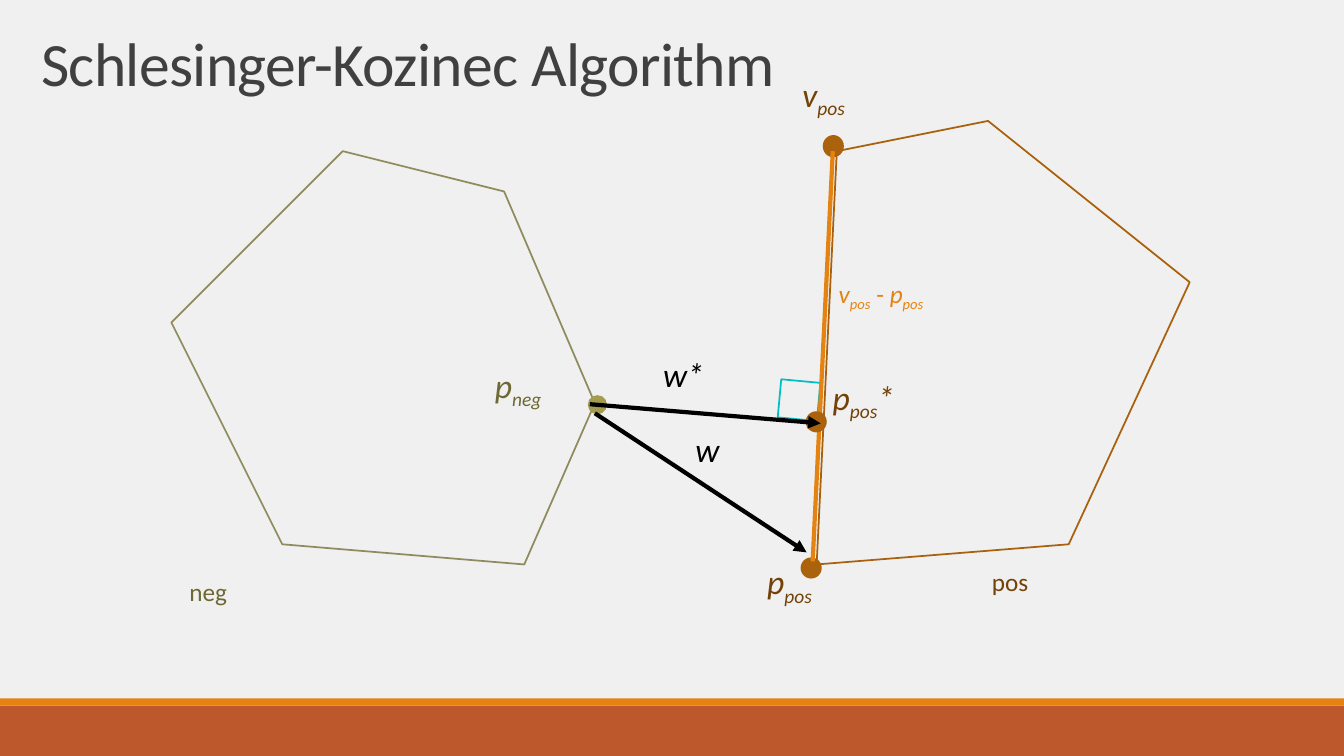
"""Build the Schlesinger-Kozinec slide on a grid of tenth-inch cells."""
from lxml import etree
from pptx import Presentation
from pptx import util as u
from pptx.dml import color
from pptx.enum import shapes, text
from pptx.oxml import ns

prs = Presentation()
prs.slide_width, prs.slide_height = u.Inches(13.33), u.Inches(7.5)
s = prs.slides.add_slide(prs.slide_layouts[6])
cell = prs.slide_height / 75
columns = prs.slide_width / cell
OVAL, RECT = shapes.MSO_SHAPE.OVAL, shapes.MSO_SHAPE.RECTANGLE
BROWN, ORANGE, BLACK = "AB620D", "E48312", "000000"
POS_TEXT, NEG_TEXT = "724209", "6D6834"


def rgb(code):
    return color.RGBColor.from_string(code)


def add_filled(kind, fill, *at):
    sp = s.shapes.add_shape(kind, *(round(n * cell) for n in at))
    sp.shadow.inherit = False
    sp.fill.solid()
    sp.fill.fore_color.rgb = rgb(fill)
    sp.line.fill.background()
    return sp


s.background.fill.solid()
s.background.fill.fore_color.rgb = rgb("F0F0F0")
add_filled(RECT, "BD582C", 0, 70, columns, 5)
add_filled(RECT, ORANGE, 0, 69.3, columns, 0.7)

title = s.shapes.add_textbox(*(round(n * cell) for n in (3.1, 3, 110, 7.5)))
tf = title.text_frame
tf.word_wrap = True
tf.vertical_anchor = text.MSO_ANCHOR.MIDDLE
p = tf.paragraphs[0]
p.line_spacing = 0.85
r = p.add_run()
r.text = "Schlesinger-Kozinec Algorithm"
r.font.name, r.font.size = "Calibri", u.Pt(44)
r.font.color.rgb = rgb("404040")
r.font._element.set("spc", "-50")

polygons = [
    ("908B5F", [(28.2, 54), (52.4, 55.7), (59.3, 40.1), (50, 18.6), (34.2, 14.7), (16.7, 32.4)]),
    ("A9610D", [(80.6, 56.2), (82.8, 14.8), (98.4, 12.4), (117.5, 27.5), (106.4, 53.9)]),
]
for line, points in polygons:
    fb = s.shapes.build_freeform(*points[0], scale=cell)
    fb.add_line_segments(points[1:], close=True)
    sp = fb.convert_to_shape()
    sp.shadow.inherit = False
    sp.fill.background()
    sp.line.color.rgb = rgb(line)
    sp.line.width = u.Pt(1.25)

add_filled(OVAL, BROWN, 81.6, 13.4, 2.1, 2.2)
add_filled(OVAL, BROWN, 79.4, 55.3, 2.1, 2.1)
add_filled(OVAL, "A39B4E", 58.3, 39.2, 1.9, 1.9)

angle = add_filled(RECT, BLACK, 77.3, 37.8, 3.9, 3.8)
angle.rotation = 5.3
angle.fill.background()
angle.line.color.rgb = rgb("00BFC4")
angle.line.width = u.Pt(1.25)

segments = [
    (BLACK, True, (59, 41, 80, 54.8)),
    (ORANGE, False, (82.6, 15, 80.6, 55.7)),
    (BLACK, True, (58.5, 40.1, 81.4, 42)),
]
for line, arrow, ends in segments:
    if ends == segments[-1][2]:
        add_filled(OVAL, BROWN, 79.9, 40.8, 2.1, 2.1)
    c = s.shapes.add_connector(shapes.MSO_CONNECTOR.STRAIGHT, *(round(n * cell) for n in ends))
    c.line.color.rgb = rgb(line)
    c.line.width = u.Pt(3)
    if arrow:
        etree.SubElement(c.line._get_or_add_ln(), ns.qn("a:tailEnd"), type="triangle")
    etree.SubElement(c._element.spPr, ns.qn("a:effectLst"))

labels = [
    (NEG_TEXT, 18, (17.8, 56.7, 16.1, 5.8), ["neg"]),
    (POS_TEXT, 18, (97.4, 55.7, 16.1, 5.8), ["pos"]),
    (POS_TEXT, 24, (75.1, 55.2, 10.3, 7.2), ["p", "_pos"]),
    (NEG_TEXT, 24, (48.1, 35.7, 10.3, 7.2), ["p", "_neg"]),
    (POS_TEXT, 24, (78.6, 6.8, 10.3, 6.4), ["v", "_pos"]),
    (BLACK, 24, (68, 42.1, 10.3, 7.1), ["w"]),
    (ORANGE, 18, (82.2, 27.1, 16.1, 5.7), ["v", "_pos", " - ", "p", "_pos"]),
    (BLACK, 24, (64.8, 34.6, 10.3, 7.1), ["w*"]),
    (POS_TEXT, 24, (81.6, 36.9, 14.6, 7.1), ["p", "_pos", "*"]),
]
for ink, size, at, runs in labels:
    tf = s.shapes.add_textbox(*(round(n * cell) for n in at)).text_frame
    tf.word_wrap = True
    tf.auto_size = text.MSO_AUTO_SIZE.SHAPE_TO_FIT_TEXT
    p = tf.paragraphs[0]
    for part in runs:
        r = p.add_run()
        r.text = part.lstrip("_")
        r.font.name, r.font.size = "Calibri", u.Pt(size)
        r.font.color.rgb = rgb(ink)
        r.font.italic = part not in ("neg", "pos", " - ")
        if part.startswith("_"):
            r.font._element.set("baseline", "-25000")

prs.save("out.pptx")
